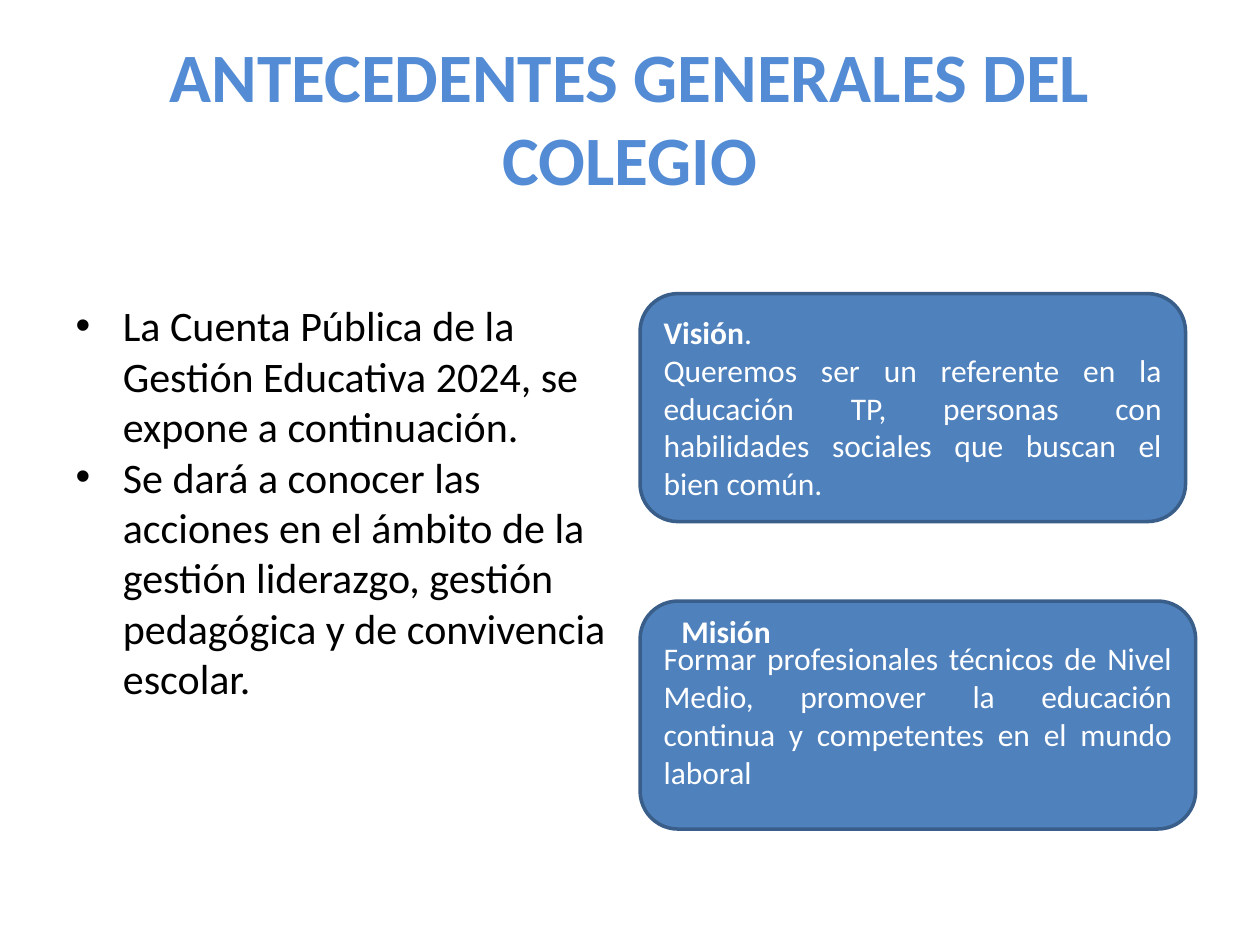
from dataclasses import dataclass

from pptx import Presentation
from pptx.dml.color import RGBColor
from pptx.enum.shapes import MSO_SHAPE
from pptx.enum.text import MSO_ANCHOR, MSO_AUTO_SIZE, PP_ALIGN
from pptx.util import Inches, Pt


@dataclass(frozen=True)
class Theme:
    font: str = "Calibri"
    heading: RGBColor = RGBColor(0x53, 0x8C, 0xD5)
    text: RGBColor = RGBColor(0, 0, 0)
    card: RGBColor = RGBColor(0x4F, 0x81, 0xBD)
    border: RGBColor = RGBColor(0x39, 0x5E, 0x89)
    card_text: RGBColor = RGBColor(0xFF, 0xFF, 0xFF)
    title_size: Pt = Pt(39.6)
    body_size: Pt = Pt(24)
    card_size: Pt = Pt(18)


THEME = Theme()


def place(sp, box):
    sp.left, sp.top, sp.width, sp.height = (Inches(v) for v in box)


def style(p, size, color, bold=False, align=PP_ALIGN.LEFT):
    p.font.name = THEME.font
    p.font.size = size
    p.font.color.rgb = color
    p.font.bold = bold
    p.alignment = align
    p.space_before = Pt(0)


def add_title(s, box, text):
    sp = s.shapes.title
    place(sp, box)
    tf = sp.text_frame
    tf.text = text
    tf.auto_size = MSO_AUTO_SIZE.NONE
    tf.vertical_anchor = MSO_ANCHOR.MIDDLE
    style(tf.paragraphs[0], THEME.title_size, THEME.heading, True, PP_ALIGN.CENTER)


def add_list(s, box, items):
    sp = s.placeholders[1]
    place(sp, box)
    tf = sp.text_frame
    tf.text = "\n".join(items)
    tf.auto_size = MSO_AUTO_SIZE.NONE
    for p in tf.paragraphs:
        style(p, THEME.body_size, THEME.text)


def add_card(s, box, text):
    sp = s.shapes.add_shape(MSO_SHAPE.ROUNDED_RECTANGLE, *(Inches(v) for v in box))
    sp.shadow.inherit = False
    sp.fill.solid()
    sp.fill.fore_color.rgb = THEME.card
    sp.line.color.rgb = THEME.border
    sp.line.width = Pt(2)
    tf = sp.text_frame
    tf.word_wrap = True
    tf.vertical_anchor = MSO_ANCHOR.MIDDLE
    tf.text = text
    for p in tf.paragraphs:
        style(p, THEME.card_size, THEME.card_text, align=PP_ALIGN.JUSTIFY)
    return tf


def add_vision(s, box):
    tf = add_card(s, box, "\nQueremos ser un referente en la educación TP, "
                  "personas con habilidades sociales que buscan el bien común.")
    p = tf.paragraphs[0]
    p.alignment = PP_ALIGN.LEFT
    r = p.add_run()
    r.text = "Visión"
    r.font.bold = True
    p.add_run().text = "."


def add_mission(s, box):
    add_card(s, box, "Formar profesionales técnicos de Nivel Medio, promover la "
             "educación continua y competentes en el mundo laboral")
    left, top = box[:2]
    sp = s.shapes.add_textbox(Inches(left + 0.23), Inches(top + 0.04),
                              Inches(0.92), Inches(0.4))
    tf = sp.text_frame
    tf.word_wrap = True
    tf.text = "Misión"
    style(tf.paragraphs[0], THEME.card_size, THEME.card_text, True)


def main():
    prs = Presentation()
    prs.slide_width, prs.slide_height = Inches(10), Inches(7.5)
    s = prs.slides.add_slide(prs.slide_layouts[1])
    add_title(s, (0.5, 0.3, 9, 1.25), "ANTECEDENTES GENERALES DEL COLEGIO")
    add_list(s, (0.5, 2.33, 4.58, 4.37), [
        "La Cuenta Pública de la Gestión Educativa 2024, se expone a continuación.",
        "Se dará a conocer las acciones en el ámbito de la gestión liderazgo, "
        "gestión pedagógica y de convivencia escolar.",
    ])
    add_vision(s, (5.08, 2.33, 4.33, 1.81))
    add_mission(s, (5.08, 4.77, 4.41, 1.81))
    prs.save("out.pptx")


if __name__ == "__main__":
    main()
